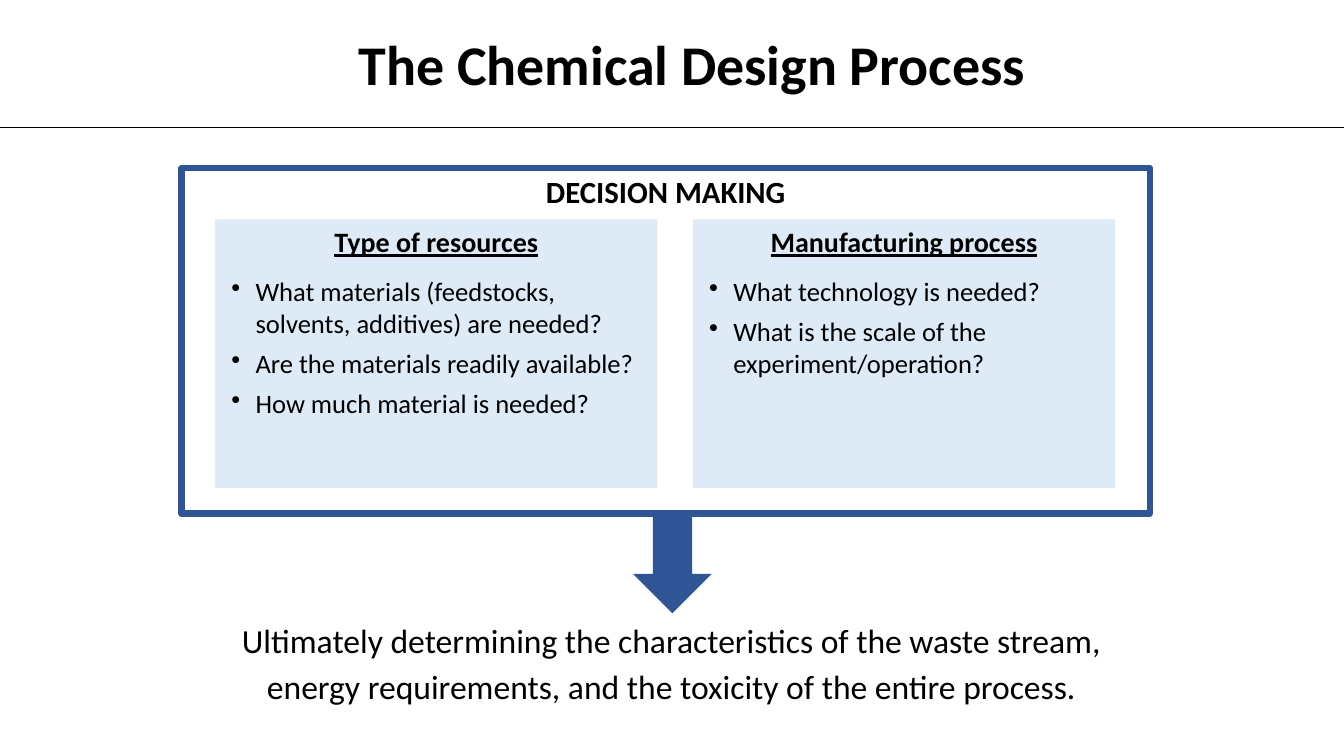
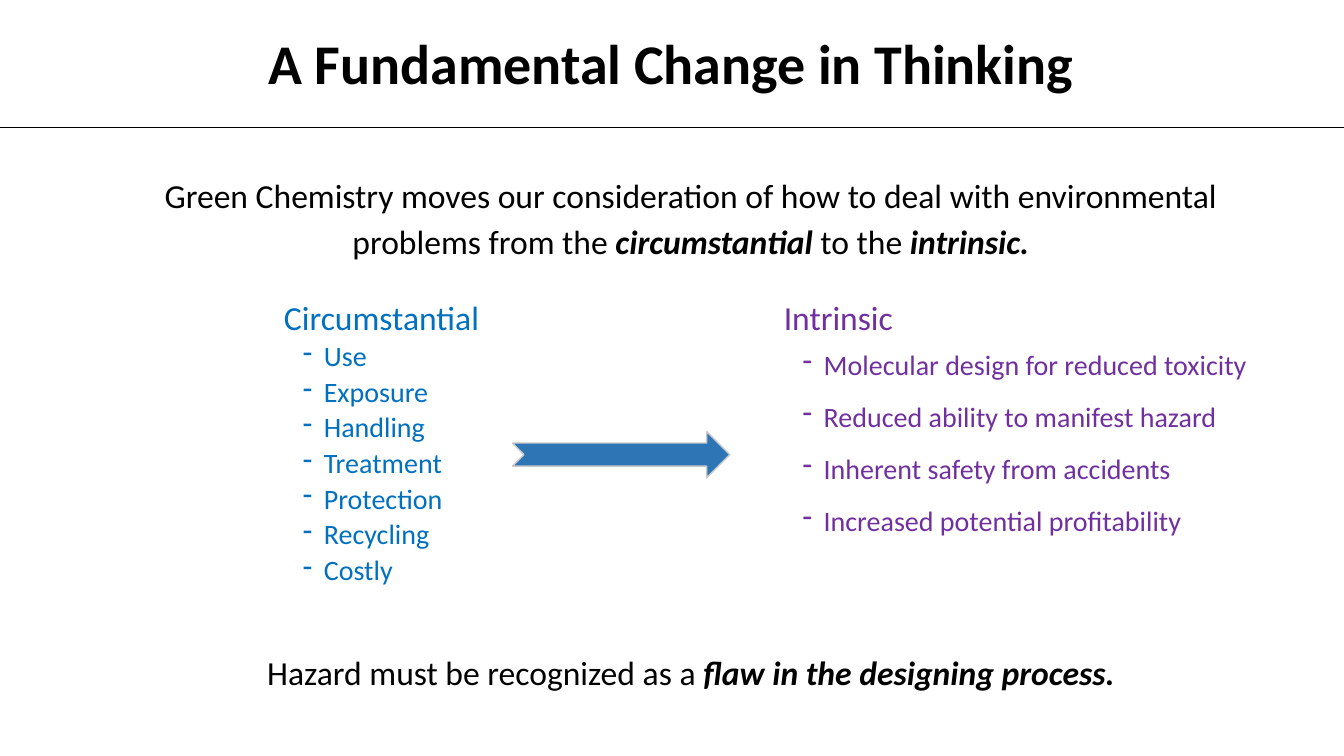
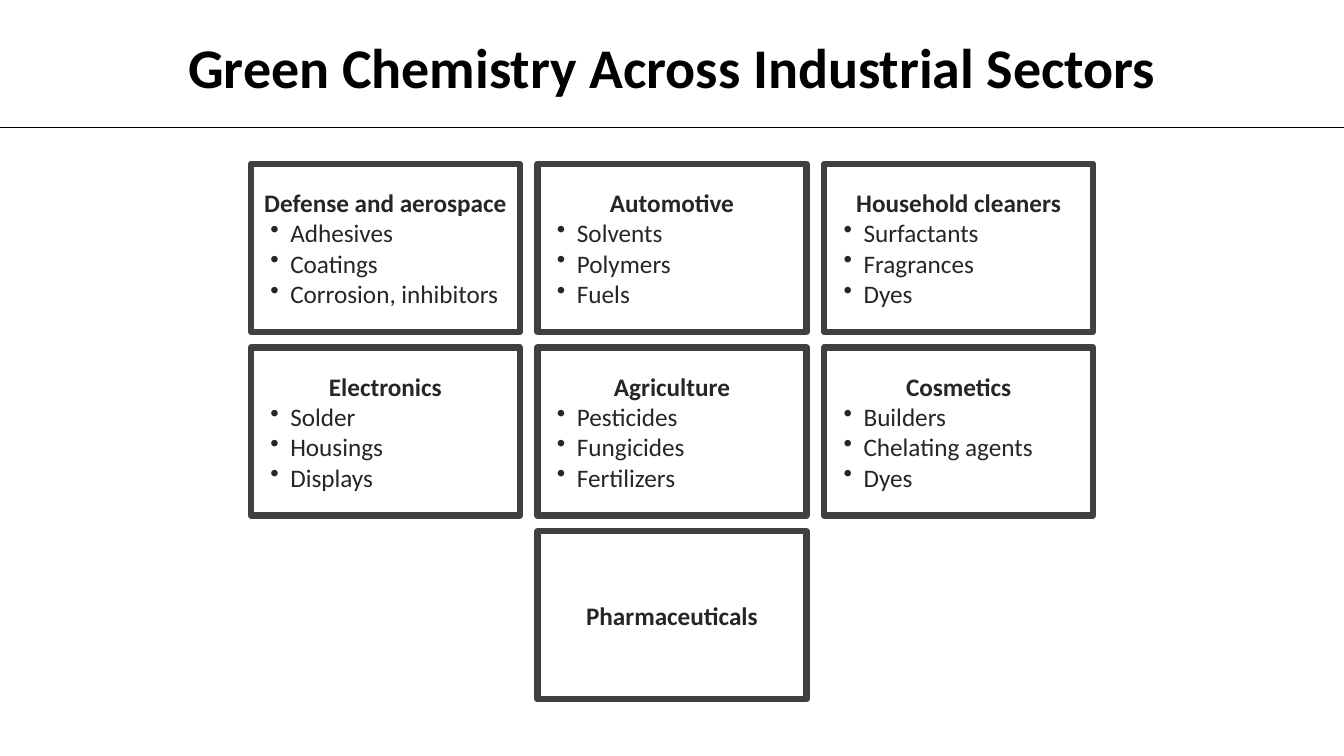
"""Build three slides on green chemistry and the chemical design process."""
from dataclasses import dataclass
from functools import partial
from typing import Optional, Sequence, Union

from lxml import etree
from pptx import Presentation
from pptx import util as u
from pptx.dml.color import RGBColor
from pptx.enum import shapes, text
from pptx.oxml import ns

PX = 9525
PAGE_WIDTH, PAGE_HEIGHT = 1280, 720
RULE_TOP = 121
FONT = "Calibri"

BLACK = RGBColor(0x00, 0x00, 0x00)
WHITE = RGBColor(0xFF, 0xFF, 0xFF)
NAVY = RGBColor(0x2F, 0x55, 0x97)
PALE_BLUE = RGBColor(0xDE, 0xEB, 0xF7)
ARROW_BLUE = RGBColor(0x2E, 0x75, 0xB6)
SILVER = RGBColor(0xC9, 0xC9, 0xC9)
BLUE = RGBColor(0x00, 0x70, 0xC0)
PURPLE = RGBColor(0x70, 0x30, 0xA0)
CHARCOAL = RGBColor(0x40, 0x40, 0x40)
INK = RGBColor(0x26, 0x26, 0x26)

RECTANGLE = shapes.MSO_SHAPE.RECTANGLE
LEFT, CENTER = text.PP_ALIGN.LEFT, text.PP_ALIGN.CENTER
TOP, MIDDLE = text.MSO_ANCHOR.TOP, text.MSO_ANCHOR.MIDDLE
TITLE_ONLY, TITLE_AND_BODY = 5, 1


@dataclass(frozen=True)
class Area:
    left: int
    top: int
    width: int
    height: int

    def emu(self) -> tuple:
        return tuple(u.Emu(side * PX) for side in (self.left, self.top, self.width, self.height))


@dataclass(frozen=True)
class Span:
    text: str
    strong: bool = False


@dataclass(frozen=True)
class Panel:
    area: Area
    heading: str
    questions: Sequence[str]


@dataclass(frozen=True)
class DashList:
    area: Area
    heading: str
    color: RGBColor
    spacing: float
    after: float
    items: Sequence[str]


@dataclass(frozen=True)
class Sector:
    column: int
    row: int
    name: str
    products: Sequence[str] = ()


PANELS = (
    Panel(Area(205, 209, 421, 256), "Type of resources", (
        "What materials (feedstocks, solvents, additives) are needed?",
        "Are the materials readily available?",
        "How much material is needed?")),
    Panel(Area(660, 209, 402, 256), "Manufacturing process", (
        "What technology is needed?",
        "What is the scale of the experiment/operation?")),
)

DASH_LISTS = (
    DashList(Area(261, 282, 301, 298), "Circumstantial", BLUE, 0.9, 0, (
        "Use", "Exposure", "Handling", "Treatment", "Protection", "Recycling", "Costly")),
    DashList(Area(737, 282, 468, 298), "Intrinsic", PURPLE, 1.14, 6, (
        "Molecular design for reduced toxicity",
        "Reduced ability to manifest hazard",
        "Inherent safety from accidents",
        "Increased potential profitability")),
)

SECTORS = (
    Sector(0, 0, "Defense and aerospace", ("Adhesives", "Coatings", "Corrosion, inhibitors")),
    Sector(1, 0, "Automotive", ("Solvents", "Polymers", "Fuels")),
    Sector(2, 0, "Household cleaners", ("Surfactants", "Fragrances", "Dyes")),
    Sector(0, 1, "Electronics", ("Solder", "Housings", "Displays")),
    Sector(1, 1, "Agriculture", ("Pesticides", "Fungicides", "Fertilizers")),
    Sector(2, 1, "Cosmetics", ("Builders", "Chelating agents", "Dyes")),
    Sector(1, 2, "Pharmaceuticals"),
)


def add_text(frame, content: Union[str, Sequence[Span]], *, size: float,
             color: RGBColor = BLACK, bold: bool = False, underline: bool = False,
             align=LEFT, spacing: float = 1.0, before: float = 0, after: float = 0,
             bullet: str = "", margin: int = 0, hanging: int = 0) -> None:
    """Add one formatted paragraph, using the empty first one if it is free."""
    first = not frame.paragraphs[-1].runs
    para = frame.paragraphs[0] if first else frame.add_paragraph()
    properties = para._p.get_or_add_pPr()
    properties.set("marL", str(margin * PX))
    properties.set("indent", str(-hanging * PX))
    mark = etree.SubElement(properties, ns.qn("a:buChar" if bullet else "a:buNone"))
    if bullet:
        mark.set("char", bullet)
    para.alignment = align
    para.line_spacing = spacing
    para.space_before = u.Pt(0 if first else before)
    para.space_after = u.Pt(after)
    for span in [Span(content)] if isinstance(content, str) else content:
        run = para.add_run()
        run.text = span.text
        font = run.font
        font.name, font.size = FONT, u.Pt(size)
        font.color.rgb = color
        font.bold = bold or span.strong
        font.italic = span.strong
        font.underline = underline


add_statement = partial(add_text, size=24, align=CENTER, spacing=1.14)


def prepare_frame(box, anchor=TOP):
    """Return the wrapped, fixed-size text frame of a box."""
    frame = box.text_frame
    frame.word_wrap = True
    frame.auto_size = text.MSO_AUTO_SIZE.NONE
    frame.vertical_anchor = anchor
    return frame


def place(holder, area: Area, anchor=TOP):
    """Move a placeholder and return its text frame."""
    holder.left, holder.top, holder.width, holder.height = area.emu()
    return prepare_frame(holder, anchor)


def add_box(parent, kind, area: Area, fill: Optional[RGBColor] = None,
            line: Optional[RGBColor] = None, weight: float = 4.5, anchor=TOP):
    """Draw a preset shape and return its text frame."""
    box = parent.add_shape(kind, *area.emu())
    box.shadow.inherit = False
    if fill is None:
        box.fill.background()
    else:
        box.fill.solid()
        box.fill.fore_color.rgb = fill
    if line is None:
        box.line.fill.background()
    else:
        box.line.color.rgb = line
        box.line.width = u.Pt(weight)
    return prepare_frame(box, anchor)


def add_page(deck, layout: int, title: str, area: Area, spacing: float = 0.9):
    """Add a slide with its title and the rule below it."""
    page = deck.slides.add_slide(deck.slide_layouts[layout])
    add_text(place(page.shapes.title, area, MIDDLE), title, size=40, bold=True,
             align=CENTER, spacing=spacing)
    height = u.Emu(RULE_TOP * PX)
    rule = page.shapes.add_connector(shapes.MSO_CONNECTOR.STRAIGHT, 0, height,
                                     u.Emu(PAGE_WIDTH * PX), height)
    rule.line.color.rgb = BLACK
    rule.line.width = u.Pt(0.5)
    etree.SubElement(rule._element.spPr, ns.qn("a:effectLst"))
    return page


def build_design_process(deck) -> None:
    """Show the decisions that lead to the outcome of a process."""
    page = add_page(deck, TITLE_AND_BODY, "The Chemical Design Process", Area(324, 30, 670, 68))
    add_statement(place(page.placeholders[1], Area(217, 580, 845, 96)),
                  "Ultimately determining the characteristics of the waste stream, "
                  "energy requirements, and the toxicity of the entire process.")
    group = page.shapes.add_group_shape().shapes
    decision = add_box(group, RECTANGLE, Area(173, 160, 922, 329), WHITE, NAVY)
    add_text(decision, "DECISION MAKING", size=22, bold=True, align=CENTER)
    for panel in PANELS:
        frame = add_box(group, RECTANGLE, panel.area, PALE_BLUE)
        add_text(frame, panel.heading, size=20, bold=True, underline=True, align=CENTER, after=6)
        for question in panel.questions:
            add_text(frame, question, size=19, before=6, bullet="•", margin=29, hanging=23)
    add_box(page.shapes, shapes.MSO_SHAPE.DOWN_ARROW, Area(603, 491, 75, 93), NAVY)


def build_change_in_thinking(deck) -> None:
    """Contrast circumstantial with intrinsic thinking."""
    page = add_page(deck, TITLE_AND_BODY, "A Fundamental Change in Thinking",
                    Area(159, 29, 960, 68))
    body = place(page.placeholders[1], Area(128, 156, 1060, 525))
    add_statement(body, [
        Span("Green Chemistry moves our consideration of how to deal with "
             "environmental problems from the "),
        Span("circumstantial", True), Span(" to the "), Span("intrinsic.", True)])
    add_statement(body, [Span("Hazard must be recognized as a"),
                         Span(" flaw in the designing process.", True)], before=275)
    for group in DASH_LISTS:
        frame = prepare_frame(page.shapes.add_textbox(*group.area.emu()))
        add_text(frame, group.heading, size=24, color=group.color, spacing=0.9)
        for item in group.items:
            add_text(frame, item, size=20, color=group.color, spacing=group.spacing,
                     before=3.8, after=group.after, bullet="-", margin=38, hanging=20)
    add_box(page.shapes, shapes.MSO_SHAPE.NOTCHED_RIGHT_ARROW, Area(488, 411, 207, 44),
            ARROW_BLUE, SILVER, 1)


def build_sectors(deck) -> None:
    """Lay out the industrial sectors on a grid."""
    page = add_page(deck, TITLE_ONLY, "Green Chemistry Across Industrial Sectors",
                    Area(71, 26, 1138, 74), 1.0)
    for sector in SECTORS:
        area = Area(239 + 273 * sector.column, 156 + 175 * sector.row, 256, 160)
        frame = add_box(page.shapes, RECTANGLE, area, line=CHARCOAL, anchor=MIDDLE)
        add_text(frame, sector.name, size=18, color=INK, bold=True, align=CENTER)
        for product in sector.products:
            add_text(frame, product, size=18, color=INK, bullet="•", margin=28, hanging=19)


def main() -> None:
    """Build and save the deck."""
    deck = Presentation()
    deck.slide_width, deck.slide_height = u.Emu(PAGE_WIDTH * PX), u.Emu(PAGE_HEIGHT * PX)
    build_design_process(deck)
    build_change_in_thinking(deck)
    build_sectors(deck)
    deck.save("out.pptx")


if __name__ == "__main__":
    main()
